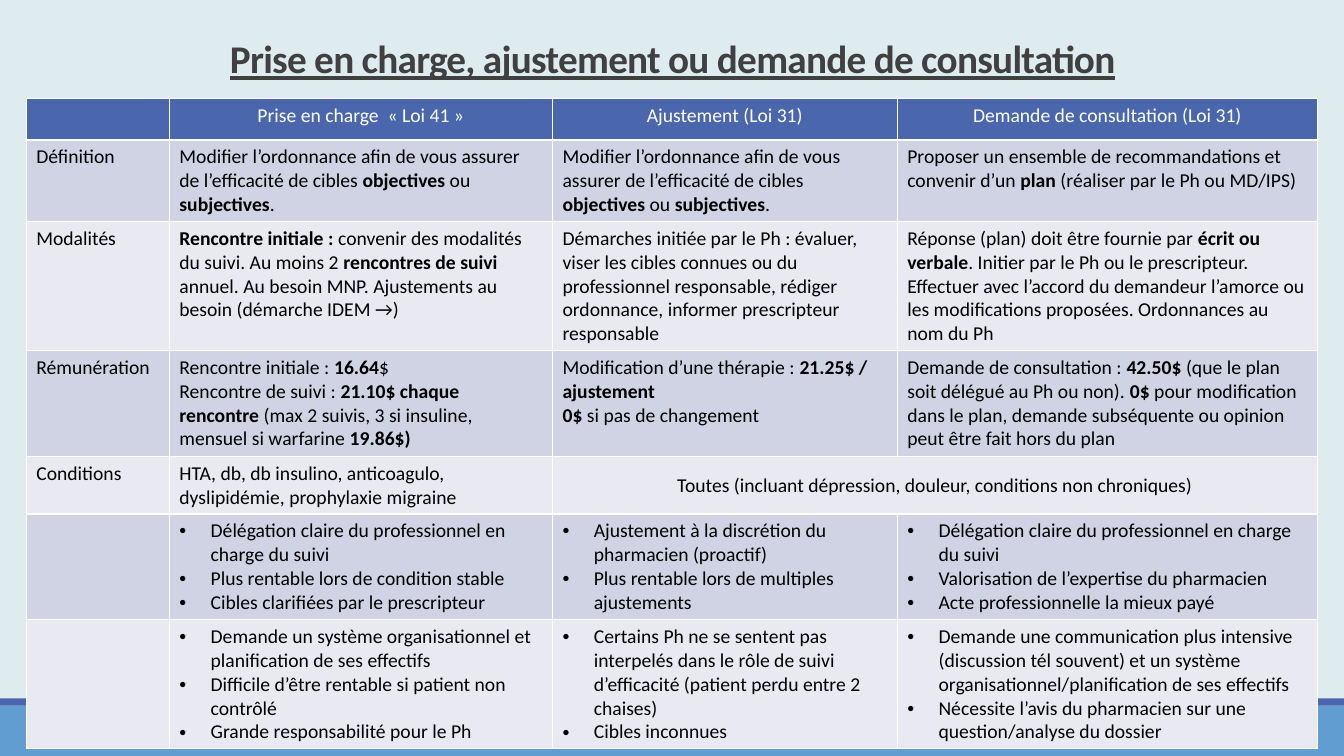
from dataclasses import dataclass

from lxml.etree import SubElement
from pptx import Presentation
from pptx.dml.color import RGBColor as RGB
from pptx.enum.shapes import MSO_SHAPE as SHAPE
from pptx.enum.text import MSO_ANCHOR as ANCHOR, PP_ALIGN as ALIGN
from pptx.oxml.ns import qn
from pptx.util import Inches, Pt

COLORS = {
    "background": "DEECEF", "footer": "629DD1", "accent": "4A66AC",
    "title": "404040", "white": "FFFFFF", "text": "000000",
    "dark_band": "D0D3E3", "light_band": "E9EAF1",
}
TITLE = "Prise en charge, ajustement ou demande de consultation"
TITLE_FORMAT = {"name": "Calibri", "size": Pt(28), "bold": True, "underline": True}
CELL_FORMAT = {"name": "Calibri", "size": Pt(14)}
COL_WIDTHS = (1.42, 3.8, 3.42, 4.17)
BULLET_INDENT = 0.31


@dataclass
class Bar:
    top: float
    height: float
    color: str


@dataclass
class Row:
    height: float
    cells: tuple[str, ...]
    bullets: bool = False


BARS = (Bar(7, 0.5, "footer"), Bar(6.93, 0.07, "accent"))

# Each line of a cell is a paragraph; ** switches bold on and off
ADJUST = ("Modifier l’ordonnance afin de vous assurer de l’efficacité de cibles "
          "**objectives** ou **subjectives**.")
ROWS = (
    Row(0.41, ("", "Prise en charge  « Loi 41 »", "Ajustement (Loi 31)",
               "Demande de consultation (Loi 31)")),
    Row(0.81, ("Définition", ADJUST, ADJUST,
               "Proposer un ensemble de recommandations et convenir d’un **plan** "
               "(réaliser par le Ph ou MD/IPS)")),
    Row(1.28, ("Modalités",
               "**Rencontre initiale : **convenir des modalités du suivi. Au moins 2 "
               "**rencontres de suivi **annuel. Au besoin MNP. Ajustements au besoin "
               "(démarche IDEM →)",
               "Démarches initiée par le Ph : évaluer, viser les cibles connues ou du "
               "professionnel responsable, rédiger ordonnance, informer prescripteur "
               "responsable",
               "Réponse (plan) doit être fournie par **écrit ou verbale**. Initier par "
               "le Ph ou le prescripteur.\n"
               "Effectuer avec l’accord du demandeur l’amorce ou les modifications "
               "proposées. Ordonnances au nom du Ph")),
    Row(1.05, ("Rémunération",
               "Rencontre initiale : **16.64**$\n"
               "Rencontre de suivi : **21.10$ chaque rencontre **(max 2 suivis, 3 si "
               "insuline, mensuel si warfarine **19.86$)**",
               "Modification d’une thérapie : **21.25$ / ajustement**\n"
               "**0$ **si pas de changement",
               "Demande de consultation : **42.50$ **(que le plan soit délégué au Ph ou "
               "non). **0$ **pour modification dans le plan, demande subséquente ou "
               "opinion peut être fait hors du plan")),
    Row(0.57, ("Conditions",
               "HTA, db, db insulino, anticoagulo, dyslipidémie, prophylaxie migraine",
               "Toutes (incluant dépression, douleur, conditions non chroniques)", "")),
    Row(1.05, ("",
               "Délégation claire du professionnel en charge du suivi\n"
               "Plus rentable lors de condition stable\n"
               "Cibles clarifiées par le prescripteur",
               "Ajustement à la discrétion du pharmacien (proactif)\n"
               "Plus rentable lors de multiples ajustements",
               "Délégation claire du professionnel en charge du suivi\n"
               "Valorisation de l’expertise du pharmacien\n"
               "Acte professionnelle la mieux payé"), bullets=True),
    Row(1.28, ("",
               "Demande un système organisationnel et planification de ses effectifs\n"
               "Difficile d’être rentable si patient non contrôlé\n"
               "Grande responsabilité pour le Ph",
               "Certains Ph ne se sentent pas interpelés dans le rôle de suivi "
               "d’efficacité (patient perdu entre 2 chaises)\n"
               "Cibles inconnues",
               "Demande une communication plus intensive (discussion tél souvent) et un "
               "système organisationnel/planification de ses effectifs\n"
               "Nécessite l’avis du pharmacien sur une question/analyse du dossier"),
        bullets=True),
)
CONDITIONS_ROW, MERGED_COLS = 4, (2, 3)


def rgb(name: str) -> RGB:
    return RGB.from_string(COLORS[name])


def format_font(font, values: dict, color: str) -> None:
    for name, value in values.items():
        setattr(font, name, value)
    font.color.rgb = rgb(color)


def add_bar(s, bar: Bar, width: int) -> None:
    sp = s.shapes.add_shape(SHAPE.RECTANGLE, 0, Inches(bar.top), width, Inches(bar.height))
    sp.shadow.inherit = False
    sp.fill.solid()
    sp.fill.fore_color.rgb = rgb(bar.color)
    sp.line.fill.background()


def add_title(s) -> None:
    tf = s.shapes.add_textbox(Inches(0.92), Inches(0.22), Inches(11.5), Inches(0.64)).text_frame
    tf.word_wrap = True
    tf.vertical_anchor = ANCHOR.BOTTOM
    p = tf.paragraphs[0]
    p.alignment = ALIGN.CENTER
    p.line_spacing = 0.85
    r = p.add_run()
    r.text = TITLE
    format_font(r.font, TITLE_FORMAT, "title")
    r.font._element.set("spc", "-50")


def add_bullet(p) -> None:
    pPr = p._p.get_or_add_pPr()
    pPr.set("marL", str(Inches(BULLET_INDENT)))
    pPr.set("indent", str(-Inches(BULLET_INDENT)))
    SubElement(pPr, qn("a:buFont"), typeface="Arial")
    SubElement(pPr, qn("a:buChar"), char="•")


def style_cell(cell, fill: str) -> None:
    tcPr = cell._tc.get_or_add_tcPr()
    for side in ("lnL", "lnR", "lnT", "lnB"):
        ln = SubElement(tcPr, qn(f"a:{side}"), w=str(Pt(1)))
        SubElement(SubElement(ln, qn("a:solidFill")), qn("a:srgbClr"), val=COLORS["white"])
    cell.fill.solid()
    cell.fill.fore_color.rgb = rgb(fill)


def write_cell(cell, text: str, color: str, align: ALIGN, bullets: bool) -> None:
    tf = cell.text_frame
    for i, line in enumerate(text.split("\n")):
        p = tf.add_paragraph() if i else tf.paragraphs[0]
        p.alignment = align
        if bullets:
            add_bullet(p)
        for j, part in enumerate(line.split("**")):
            if part:
                r = p.add_run()
                r.text = part
                format_font(r.font, CELL_FORMAT | {"bold": j % 2 == 1}, color)


def add_comparison(s) -> None:
    table = s.shapes.add_table(
        len(ROWS), len(COL_WIDTHS), Inches(0.26), Inches(0.98),
        Inches(sum(COL_WIDTHS)), Inches(sum(row.height for row in ROWS))).table
    for col, width in zip(table.columns, COL_WIDTHS):
        col.width = Inches(width)
    for i, row in enumerate(ROWS):
        table.rows[i].height = Inches(row.height)
        fill = "accent" if i == 0 else "dark_band" if i % 2 else "light_band"
        for j, text in enumerate(row.cells):
            cell = table.cell(i, j)
            style_cell(cell, fill)
            if text:
                centered = i == 0 or (i == CONDITIONS_ROW and j in MERGED_COLS)
                write_cell(cell, text, "text" if i else "white",
                           ALIGN.CENTER if centered else ALIGN.LEFT, row.bullets)
    first, last = (table.cell(CONDITIONS_ROW, col) for col in MERGED_COLS)
    first.merge(last)
    first.vertical_anchor = ANCHOR.MIDDLE


def main() -> None:
    prs = Presentation()
    prs.slide_width, prs.slide_height = Inches(13.33), Inches(7.5)
    s = prs.slides.add_slide(prs.slide_layouts[6])

    # Background and footer bars
    s.background.fill.solid()
    s.background.fill.fore_color.rgb = rgb("background")
    for bar in BARS:
        add_bar(s, bar, prs.slide_width)

    # Title and comparison table
    add_title(s)
    add_comparison(s)
    prs.save("out.pptx")


if __name__ == "__main__":
    main()
